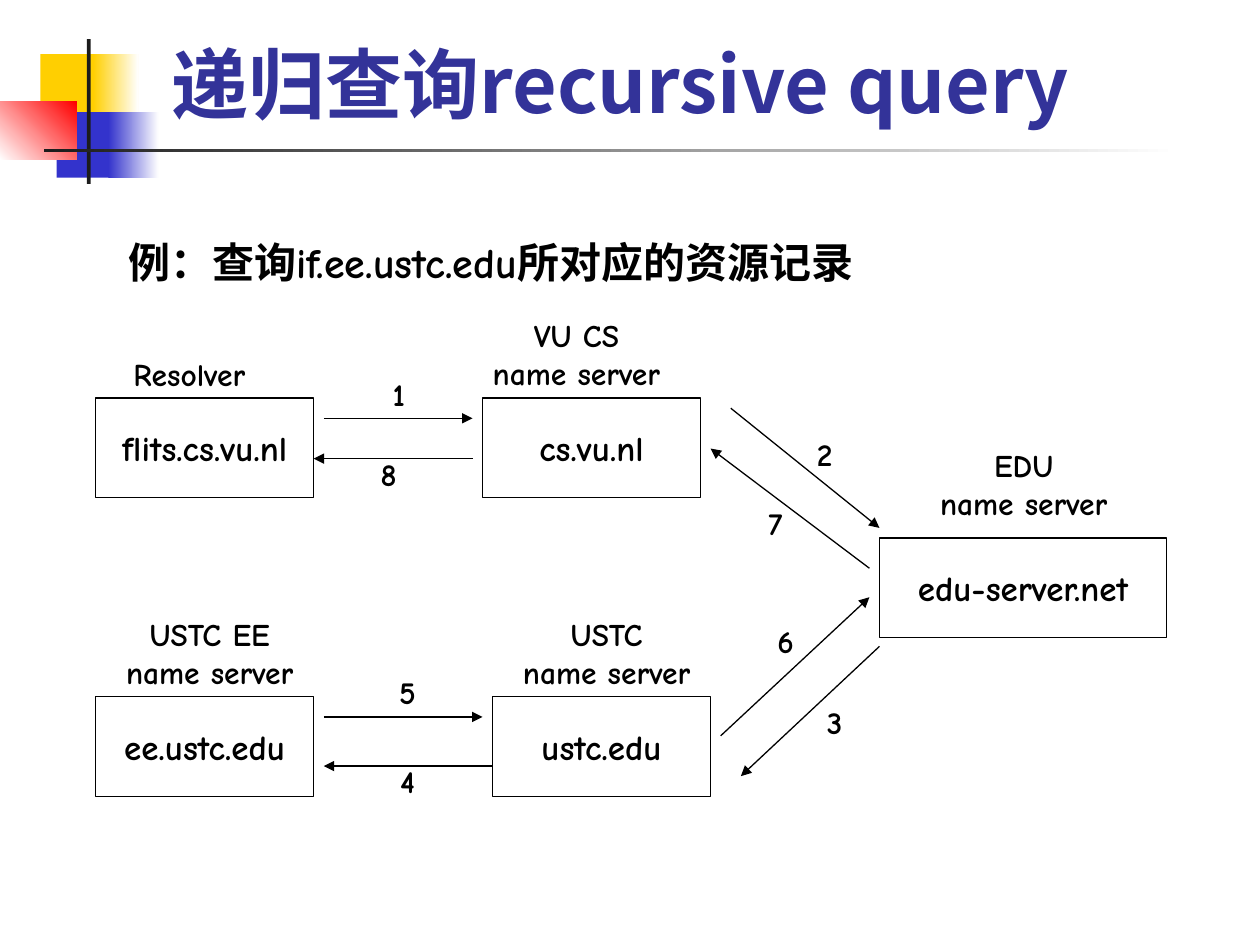
from pptx import Presentation
from pptx.dml.color import RGBColor
from pptx.enum.shapes import MSO_CONNECTOR, MSO_SHAPE
from pptx.enum.text import MSO_ANCHOR, PP_ALIGN
from pptx.oxml.ns import qn
from pptx.util import Inches, Pt
from lxml import etree

RECT = MSO_SHAPE.RECTANGLE
LINE = MSO_CONNECTOR.STRAIGHT
CENTER, LEFT = PP_ALIGN.CENTER, PP_ALIGN.LEFT
MIDDLE, BOTTOM = MSO_ANCHOR.MIDDLE, MSO_ANCHOR.BOTTOM
LATIN, HAN = "Comic Neue", "Noto Sans CJK SC"
BLACK, WHITE = "000000", "FFFFFF"

# left, top, width, height, colours from start to end, angle
DECOR = [
    (0.32, 0.43, 0.48, 0.52, ["FFCF01"], 0),
    (0.74, 0.43, 0.36, 0.52, ["FFCF01", WHITE], 0),
    (0.45, 0.89, 0.46, 0.52, ["3333CC"], 0),
    (0.86, 0.89, 0.4, 0.52, ["3333CC", WHITE], 0),
    (0, 0.81, 0.61, 0.46, [WHITE, "FF0000"], 45),
    (0.69, 0.31, 0.03, 1.15, ["1C1C1C"], 0),
    (0.35, 1.18, 9, 0.03, ["1C1C1C", WHITE], 0),
]
# host, left, top, width
HOSTS = [
    ("flits.cs.vu.nl", 0.76, 3.16, 1.73),
    ("cs.vu.nl", 3.83, 3.16, 1.73),
    ("edu-server.net", 6.98, 4.27, 2.28),
    ("ustc.edu", 3.91, 5.53, 1.73),
    ("ee.ustc.edu", 0.76, 5.53, 1.73),
]
# start, tip, left and top of the step number; in step order
STEPS = [
    ((2.57, 3.32), (3.75, 3.32), (2.89, 2.93)),
    ((5.8, 3.24), (6.98, 4.19), (6.27, 3.4)),
    ((6.98, 5.13), (5.88, 6.16), (6.35, 5.53)),
    ((3.91, 6.08), (2.57, 6.08), (2.96, 6)),
    ((2.57, 5.69), (3.83, 5.69), (2.96, 5.29)),
    ((5.72, 5.84), (6.9, 4.74), (5.96, 4.89)),
    ((6.9, 4.51), (5.64, 3.56), (5.88, 3.95)),
    ((3.75, 3.64), (2.49, 3.64), (2.81, 3.56)),
]
# server, left, top of its caption
SERVERS = [
    ("VU CS", 3.59, 2.46),
    ("EDU", 7.14, 3.49),
    ("USTC", 3.83, 4.83),
    ("USTC EE", 0.68, 4.83),
]


def color(code):
    return RGBColor.from_string(code)


def box(*sides):
    return [Inches(side) for side in sides]


def write(frame, text, size, align=LEFT, font=LATIN, code=BLACK, wrap=True):
    frame.word_wrap = wrap
    para = frame.paragraphs[0]
    para.text = text
    para.alignment = align
    for run in para.runs:
        run.font.size = Pt(size)
        run.font.bold = True
        run.font.name = font
        run.font.color.rgb = color(code)
        east = etree.SubElement(run.font._element, qn("a:ea"))
        east.set("typeface", HAN)


def add_decor(slide, left, top, width, height, codes, angle):
    shape = slide.shapes.add_shape(RECT, *box(left, top, width, height))
    shape.shadow.inherit = False
    shape.line.fill.background()
    if len(codes) == 1:
        shape.fill.solid()
        shape.fill.fore_color.rgb = color(codes[0])
        return
    shape.fill.gradient()
    shape.fill.gradient_angle = angle
    for stop, code in zip(shape.fill.gradient_stops, codes):
        stop.color.rgb = color(code)


def add_title(slide, text):
    title = slide.shapes.title
    title.left, title.top, title.width, title.height = box(1.26, 0.23, 8.52, 0.84)
    title.text_frame.vertical_anchor = BOTTOM
    write(title.text_frame, text, 44, font=HAN, code="333399")


def add_text(slide, text, left, top, width, height, size=18, align=CENTER, wrap=True):
    label = slide.shapes.add_textbox(*box(left, top, width, height))
    write(label.text_frame, text, size, align, wrap=wrap)


def add_host(slide, name, left, top, width):
    shape = slide.shapes.add_shape(RECT, *box(left, top, width, 0.79))
    shape.shadow.inherit = False
    shape.fill.solid()
    shape.fill.fore_color.rgb = color(WHITE)
    shape.line.color.rgb = color(BLACK)
    shape.line.width = Pt(0.75)
    shape.text_frame.vertical_anchor = MIDDLE
    write(shape.text_frame, name, 20, CENTER, wrap=False)


def add_arrow(slide, start, tip):
    arrow = slide.shapes.add_connector(LINE, *box(*start, *tip))
    arrow.line.color.rgb = color(BLACK)
    arrow.line.width = Pt(0.75)
    head = etree.SubElement(arrow.line._get_or_add_ln(), qn("a:tailEnd"))
    head.set("type", "triangle")
    etree.SubElement(arrow._element.spPr, qn("a:effectLst"))


def main():
    deck = Presentation()
    deck.slide_width, deck.slide_height = box(10, 7.5)
    slide = deck.slides.add_slide(deck.slide_layouts[5])
    for decor in DECOR:
        add_decor(slide, *decor)
    add_title(slide, "递归查询recursive query")
    add_text(slide, "例：查询if.ee.ustc.edu所对应的资源记录",
             0.92, 1.83, 6.55, 0.5, 24, LEFT, False)
    for host in HOSTS:
        add_host(slide, *host)
    for step, (start, tip, spot) in enumerate(STEPS, 1):
        add_arrow(slide, start, tip)
        add_text(slide, str(step), *spot, 0.55, 0.4)
    for name, left, top in SERVERS:
        add_text(slide, f"{name}\nname server", left, top, 1.97, 0.7)
    add_text(slide, "Resolver", 0.96, 2.77, 1.22, 0.4, align=LEFT, wrap=False)
    deck.save("out.pptx")


if __name__ == "__main__":
    main()
